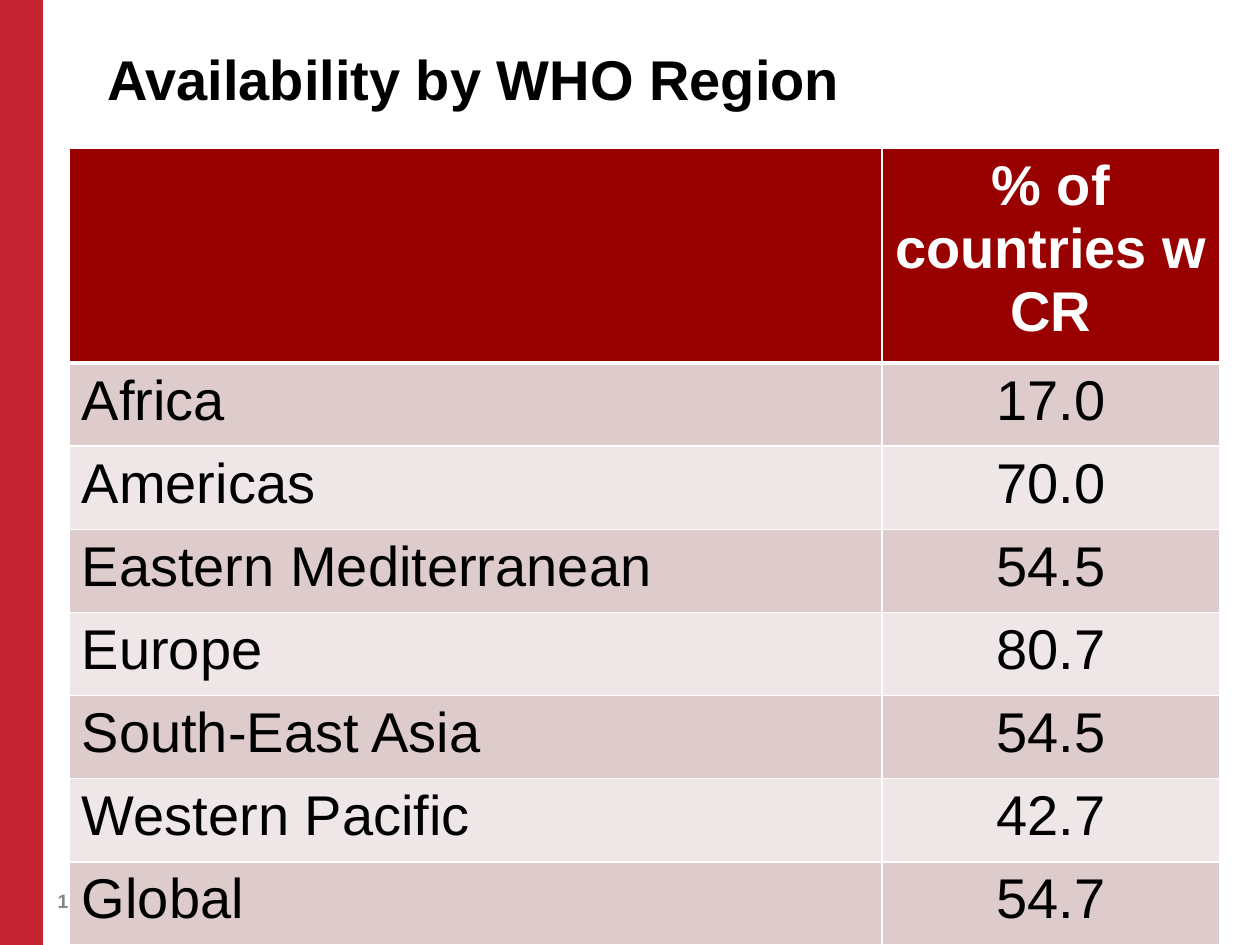
"""Build a slide with a table of availability by WHO region."""
import pptx
import pptx.dml.color
import pptx.enum.shapes
import pptx.enum.text
import pptx.oxml
import pptx.oxml.ns
import pptx.util

TITLE = "Availability by WHO Region"
PAGE_NUMBER = "10"
HEADER = ("", "% of countries w CR")
REGIONS = [
    ("Africa", "17.0"),
    ("Americas", "70.0"),
    ("Eastern Mediterranean", "54.5"),
    ("Europe", "80.7"),
    ("South-East Asia", "54.5"),
    ("Western Pacific", "42.7"),
    ("Global", "54.7"),
]
WIDTH, HEIGHT = 10, 7.5
COLUMNS = (6.45, 2.68)
HEADER_HEIGHT, ROW_HEIGHT = 1.27, 0.66
BANDS = ("DECCCC", "EFE7E7")
ALIGN = pptx.enum.text.PP_ALIGN
ANCHOR = pptx.enum.text.MSO_ANCHOR


def inches(*lengths):
    return [pptx.util.Inches(length) for length in lengths]


def color(value):
    return pptx.dml.color.RGBColor.from_string(value)


def paint(item, value):
    item.fill.solid()
    item.fill.fore_color.rgb = color(value)


def write(frame, text, size=32, ink="000000", bold=False, align=ALIGN.LEFT):
    para = frame.paragraphs[0]
    para.alignment = align
    if text:
        para.add_run().text = text
    para.font.name = "Arial"
    para.font.size = pptx.util.Pt(size)
    para.font.bold = bold
    para.font.color.rgb = color(ink)


def set_borders(cell, **widths):
    namespace = pptx.oxml.ns.nsdecls("a")
    properties = cell._tc.get_or_add_tcPr()
    for position, side in enumerate("LRTB"):
        width = pptx.util.Pt(widths.get(side, 1))
        properties.insert(position, pptx.oxml.parse_xml(
            f'<a:ln{side} {namespace} w="{width}"><a:solidFill>'
            f'<a:srgbClr val="FFFFFF"/></a:solidFill></a:ln{side}>'))


def add_page_furniture(page):
    box = page.shapes.add_textbox(*inches(0.36, 6.95, 0.75, 0.4))
    box.text_frame.word_wrap = True
    box.text_frame.vertical_anchor = ANCHOR.MIDDLE
    write(box.text_frame, PAGE_NUMBER, size=11, ink="858585", bold=True)
    stripe = page.shapes.add_shape(
        pptx.enum.shapes.MSO_SHAPE.RECTANGLE, *inches(0, 0, 0.34, HEIGHT))
    stripe.shadow.inherit = False
    stripe.line.fill.background()
    paint(stripe, "C32330")


def add_title(page):
    title = page.shapes.title
    title.left, title.top, title.width, title.height = inches(0.75, 0.3, 8.92, 1.13)
    title.text_frame.vertical_anchor = ANCHOR.TOP
    write(title.text_frame, TITLE, bold=True)


def add_region_table(page):
    rows = [HEADER, *REGIONS]
    height = HEADER_HEIGHT + ROW_HEIGHT * len(REGIONS)
    table = page.shapes.add_table(
        len(rows), len(COLUMNS), *inches(0.55, 1.18, sum(COLUMNS), height)).table
    for column, width in zip(table.columns, COLUMNS):
        column.width = pptx.util.Inches(width)
    for index, values in enumerate(rows):
        header = index == 0
        table.rows[index].height = pptx.util.Inches(HEADER_HEIGHT if header else ROW_HEIGHT)
        for number, text in enumerate(values):
            cell = table.cell(index, number)
            paint(cell, "990000" if header else BANDS[(index - 1) % 2])
            set_borders(cell, T=3 if index == 1 else 1, B=3 if header else 1)
            write(cell.text_frame, text, bold=header,
                  ink="FFFFFF" if header else "000000",
                  align=ALIGN.CENTER if number else ALIGN.LEFT)


def main():
    deck = pptx.Presentation()
    deck.slide_width, deck.slide_height = inches(WIDTH, HEIGHT)
    page = deck.slides.add_slide(deck.slide_layouts.get_by_name("Title Only"))
    add_page_furniture(page)
    add_title(page)
    add_region_table(page)
    deck.save("out.pptx")


if __name__ == "__main__":
    main()
